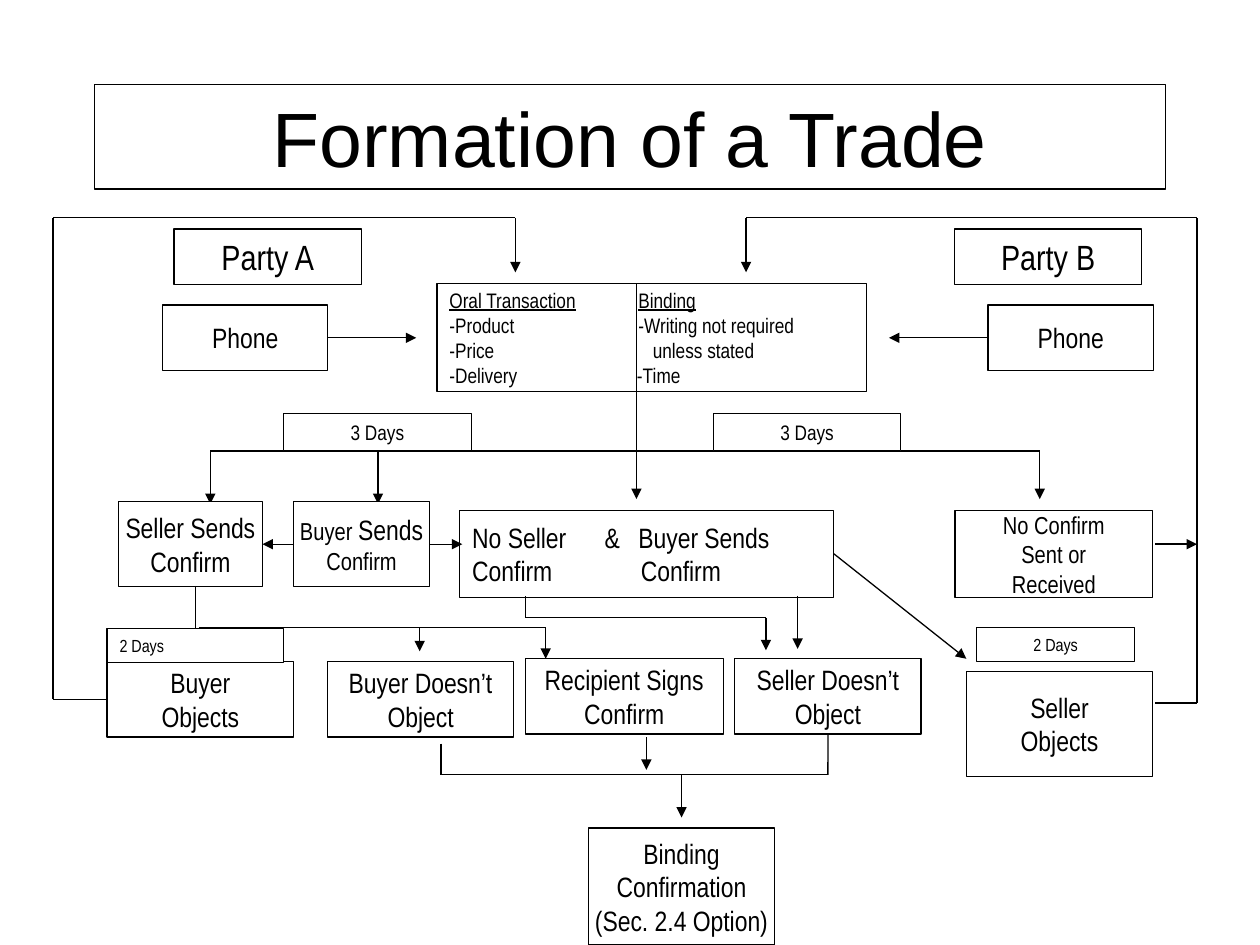
from typing import NamedTuple

from lxml import etree
from pptx import Presentation
from pptx import util as u
from pptx.dml.color import RGBColor
from pptx.enum import shapes, text
from pptx.oxml import ns

BLACK = RGBColor(0x00, 0x00, 0x00)
WHITE = RGBColor(0xFF, 0xFF, 0xFF)
LINE_WIDTH = u.Pt(0.75)
LEFT, CENTER = text.PP_ALIGN.LEFT, text.PP_ALIGN.CENTER
TOP, LEFT_SIDE, BOTTOM, RIGHT_SIDE = range(4)


class Box(NamedTuple):
    """A rectangle on the slide, in centimetres."""
    left: float
    top: float
    width: float
    height: float

    def inside(self, x, y, width, height):
        """Return a box placed relative to this one."""
        return Box(self.left + x, self.top + y, width, height)

    def point(self, x, y):
        """Return a slide point placed relative to this box."""
        return self.left + x, self.top + y


def add_run(paragraph, words, size, font="Arial Narrow", underline=None):
    """Add one formatted run."""
    run = paragraph.add_run()
    run.text = words
    run.font.name = font
    run.font.size = u.Pt(size)
    run.font.underline = underline
    run.font.color.rgb = BLACK


def set_tabs(paragraph, stops):
    """Give a paragraph left tab stops in centimetres."""
    tabs = etree.SubElement(paragraph._p.get_or_add_pPr(), ns.qn("a:tabLst"))
    for stop in stops:
        etree.SubElement(tabs, ns.qn("a:tab"), pos=str(u.Cm(stop)), algn="l")


def add_box(slide, box, lines, size=16, align=CENTER, wrap=False):
    """Add an outlined white rectangle with one paragraph for each line."""
    shape = slide.shapes.add_shape(shapes.MSO_SHAPE.RECTANGLE, *map(u.Cm, box))
    shape.shadow.inherit = False
    shape.fill.solid()
    shape.fill.fore_color.rgb = WHITE
    shape.line.color.rgb = BLACK
    shape.line.width = LINE_WIDTH
    frame = shape.text_frame
    frame.word_wrap = wrap
    frame.vertical_anchor = text.MSO_ANCHOR.MIDDLE
    for index, line in enumerate(lines):
        paragraph = frame.add_paragraph() if index else frame.paragraphs[0]
        paragraph.alignment = align
        for run in [line] if isinstance(line, str) else line:
            words, options = (run, {}) if isinstance(run, str) else run
            add_run(paragraph, words, **{"size": size, **options})
    return shape


def add_line(slide, start, end, arrow=False, begin=None, finish=None):
    """Add a straight line, optionally with an arrowhead and joined ends."""
    connector = slide.shapes.add_connector(
        shapes.MSO_CONNECTOR.STRAIGHT, *map(u.Cm, start + end))
    connector.line.color.rgb = BLACK
    connector.line.width = LINE_WIDTH
    if arrow:
        etree.SubElement(connector.line._get_or_add_ln(),
                         ns.qn("a:tailEnd"), type="triangle")
    etree.SubElement(connector._element.spPr, ns.qn("a:effectLst"))
    if begin:
        connector.begin_connect(*begin)
    if finish:
        connector.end_connect(*finish)


def add_path(slide, area, points, arrow=False, begin=None):
    """Add straight lines through points, with the arrowhead on the last."""
    places = [area.point(*point) for point in points]
    for index, (start, end) in enumerate(zip(places, places[1:])):
        add_line(slide, start, end, arrow and index == len(places) - 2,
                 begin if index == 0 else None)


def add_title(slide, area):
    """Place and format the title."""
    title = slide.shapes.title
    title.left, title.top, title.width, title.height = map(u.Cm, area)
    title.line.color.rgb = BLACK
    title.line.width = LINE_WIDTH
    title.text_frame.vertical_anchor = text.MSO_ANCHOR.MIDDLE
    paragraph = title.text_frame.paragraphs[0]
    paragraph.alignment = CENTER
    add_run(paragraph, "Formation of a Trade", 44, "Arial")


def add_parties(slide, area):
    """Draw both parties, their phones and the oral transaction."""
    party_width, phone_width = 3.78, 3.33
    far = area.width - phone_width
    sides = [("Party A", 0.23, 0, RIGHT_SIDE, 5.11),
             ("Party B", area.width - 0.23 - party_width, far, LEFT_SIDE, 14.64)]
    for name, party_left, phone_left, side, arrow_end in sides:
        add_box(slide, area.inside(party_left, 0, party_width, 1.12), [name], 20)
        phone = add_box(slide, area.inside(phone_left, 1.53, phone_width, 1.32), ["Phone"])
        add_line(slide, area.point(phone_left, 2.19), area.point(arrow_end, 2.19),
                 True, (phone, side))
    oral = add_box(slide, area.inside(5.53, 1.1, 8.66, 2.18), [
        [("Oral Transaction", {"underline": True}), "\t",
         ("Binding", {"underline": True})],
        "-Product\t-Writing not required",
        "-Price\tunless stated",
        "-Delivery\t-Time"], 12, LEFT, True)
    for paragraph, stop in zip(oral.text_frame.paragraphs, (3.81, 3.81, 4.1, 3.78)):
        set_tabs(paragraph, [stop])
    add_path(slide, area, [(9.55, 1.1), (9.55, 3.28)])


def add_confirmations(slide, area):
    """Draw the three-day branch and return the box where neither side agrees."""
    bus = 0.76
    add_path(slide, area, [(1.85, bus), (18.57, bus)])
    for left in (3.33, 11.99):
        add_box(slide, area.inside(left, 0, 3.78, bus), ["3 Days"], 12)
    for x, start, end in [(1.85, bus, 1.83), (5.23, bus, 1.83),
                          (10.44, -0.43, 1.73), (18.57, bus, 1.73)]:
        add_path(slide, area, [(x, start), (x, end)], True)
    seller = add_box(slide, area.inside(0, 1.78, 2.9, 1.72), ["Seller Sends", "Confirm"])
    buyer = add_box(slide, area.inside(3.53, 1.78, 2.74, 1.72),
                    [["Buyer ", ("Sends", {"size": 16})], "Confirm"], 14)
    neither = add_box(slide, area.inside(6.88, 1.96, 7.54, 1.75),
                      ["No Seller\t&\tBuyer Sends", "Confirm\tConfirm"], 16, LEFT, True)
    for paragraph, stops in zip(neither.text_frame.paragraphs, ([2.67, 3.35], [3.4])):
        set_tabs(paragraph, stops)
    add_box(slide, area.inside(16.86, 1.96, 3.99, 1.75),
            ["No Confirm", "Sent or", "Received"], 14)
    add_line(slide, area.point(3.53, 2.64), area.point(2.9, 2.64), True,
             (buyer, LEFT_SIDE), (seller, RIGHT_SIDE))
    add_line(slide, area.point(6.27, 2.64), area.point(6.93, 2.64), True,
             (buyer, RIGHT_SIDE))
    return neither


def add_outcomes(slide, area, neither):
    """Draw the two-day outcomes and return the box where the buyer objects."""
    add_path(slide, area, [(1.78, 0), (1.78, 1.3)], True)
    add_path(slide, area, [(1.85, 0.84), (8.84, 0.84), (8.84, 1.47)], True)
    add_path(slide, area, [(6.3, 0.84), (6.3, 1.32)], True)
    add_path(slide, area, [(8.43, 0.2), (8.43, 0.64), (13.28, 0.64), (13.28, 1.3)], True)
    add_path(slide, area, [(13.92, 0.2), (13.92, 1.27)], True)
    add_path(slide, area, [(14.65, -0.64), (17.32, 1.47)], True, (neither, RIGHT_SIDE))
    outcomes = [
        add_box(slide, area.inside(left, top, width, height), lines)
        for left, top, width, height, lines in [
            (0, 1.53, 3.76, 1.52, ["Buyer", "Objects"]),
            (4.44, 1.53, 3.76, 1.52, ["Buyer Doesn’t", "Object"]),
            (8.43, 1.47, 3.99, 1.52, ["Recipient Signs", "Confirm"]),
            (17.32, 1.73, 3.76, 2.11, ["Seller", "Objects"]),
            (12.65, 1.47, 3.76, 1.52, ["Seller Doesn’t", "Object"])]]
    add_box(slide, area.inside(0, 0.86, 3.56, 0.69), ["2 Days"], 10, LEFT)
    add_box(slide, area.inside(17.53, 0.84, 3.18, 0.69), ["2 Days"], 10)
    add_path(slide, area, [(6.73, 3.18), (6.73, 3.81), (14.53, 3.81)])
    add_path(slide, area, [(14.53, 2.99), (14.53, 3.81)], begin=(outcomes[-1], BOTTOM))
    add_path(slide, area, [(10.87, 3.05), (10.87, 3.71)], True)
    return outcomes[0]


def add_result(slide, area):
    """Draw the binding confirmation below its arrow."""
    middle = area.width / 2
    add_path(slide, area, [(middle, 0), (middle, 0.86)], True)
    add_box(slide, area.inside(0, 1.07, area.width, area.height - 1.07),
            ["Binding", "Confirmation", "(Sec. 2.4 Option)"])


def add_return_loops(slide, area, buyer_objects):
    """Draw the lines that lead objections back to the oral transaction."""
    right, bottom, drop = area.width, area.height, 1.1
    add_path(slide, area, [(1.09, 9.71), (0, 9.71), (0, 0), (9.32, 0), (9.32, drop)],
             True, (buyer_objects, LEFT_SIDE))
    add_path(slide, area, [(22.22, bottom), (right, bottom), (right, 0),
                           (13.97, 0), (13.97, drop)], True)
    add_path(slide, area, [(22.22, 6.58), (right, 6.58)], True)


def main():
    """Build the slide and save it."""
    presentation = Presentation()
    presentation.slide_width, presentation.slide_height = u.Cm(25.4), u.Cm(19.05)
    slide = presentation.slides.add_slide(presentation.slide_layouts[5])
    add_title(slide, Box(1.91, 1.7, 21.59, 2.11))
    add_parties(slide, Box(3.28, 4.62, 19.97, 3.28))
    neither = add_confirmations(slide, Box(2.39, 8.33, 20.86, 3.71))
    buyer_objects = add_outcomes(slide, Box(2.16, 11.81, 21.09, 3.86), neither)
    add_result(slide, Box(11.86, 15.62, 3.76, 3.43))
    add_return_loops(slide, Box(1.07, 4.39, 23.06, 9.78), buyer_objects)
    presentation.save("out.pptx")


if __name__ == "__main__":
    main()
